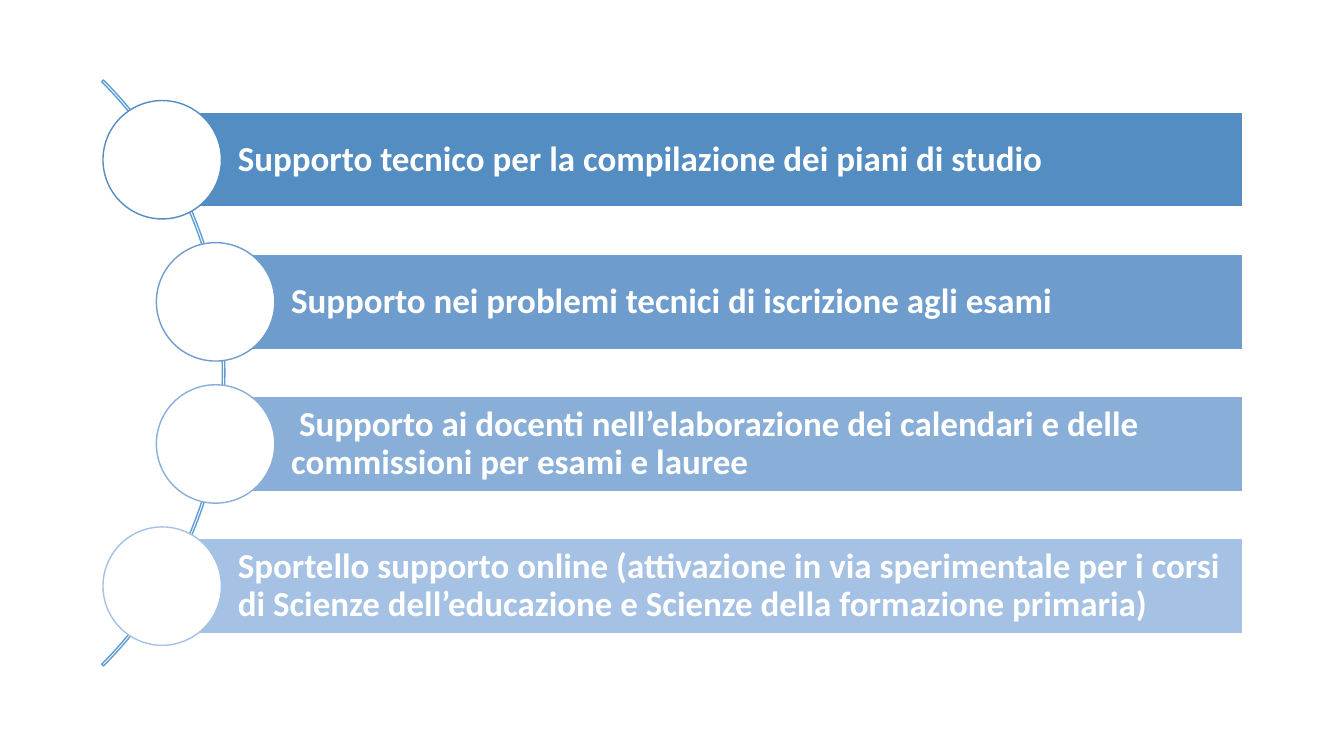
import math

import pptx
import pptx.dml.color
import pptx.enum.shapes
import pptx.enum.text
import pptx.util

SLIDE_WIDTH, SLIDE_HEIGHT = 13.33, 7.5
CENTRE_X, CENTRE_Y = -1.88, 3.7
ARC_RADIUS = 4.11
NODE_RADIUS = 4.08  # circle centres lie just inside the arc
ROW_PITCH = 1.41
BAR_RIGHT, BAR_HEIGHT = 12.33, 0.94
CIRCLE_SIZE = BAR_HEIGHT * 1.25

SERVICES = [
    ("Supporto tecnico per la compilazione dei piani di studio", "538DC1"),
    ("Supporto nei problemi tecnici di iscrizione agli esami", "6E9DCD"),
    (" Supporto ai docenti nell’elaborazione dei calendari e delle "
     "commissioni per esami e lauree", "89AFD8"),
    ("Sportello supporto online (attivazione in via sperimentale per i corsi "
     "di Scienze dell’educazione e Scienze della formazione primaria)", "A5C1E3"),
]


def colour(hex_code):
    return pptx.dml.color.RGBColor.from_string(hex_code)


def add_figure(slide, preset, box, fill, line):
    figure = slide.shapes.add_shape(preset, *map(pptx.util.Inches, box))
    figure.shadow.inherit = False
    if fill:
        figure.fill.solid()
        figure.fill.fore_color.rgb = colour(fill)
    else:
        figure.fill.background()
    figure.line.color.rgb = colour(line)
    figure.line.width = pptx.util.Pt(1)
    return figure


def add_arc(slide):
    """Draw the thin 90-degree arc that the circles sit on."""
    box = (CENTRE_X - ARC_RADIUS, CENTRE_Y - ARC_RADIUS,
           2 * ARC_RADIUS, 2 * ARC_RADIUS)
    arc = add_figure(slide, pptx.enum.shapes.MSO_SHAPE.BLOCK_ARC, box, None, "5F9CD5")
    for index, value in enumerate((189, 27, 0.003)):
        arc.adjustments[index] = value


def add_label(bar, wording):
    frame = bar.text_frame
    frame.word_wrap = True
    frame.vertical_anchor = pptx.enum.text.MSO_ANCHOR.MIDDLE
    frame.margin_left = pptx.util.Inches(0.75)
    frame.margin_top = frame.margin_right = frame.margin_bottom = pptx.util.Inches(0.07)
    paragraph = frame.paragraphs[0]
    paragraph.alignment = pptx.enum.text.PP_ALIGN.LEFT
    paragraph.line_spacing = 0.9
    run = paragraph.add_run()
    run.text = wording
    run.font.name = "Calibri"
    run.font.size = pptx.util.Pt(25)
    run.font.bold = True
    run.font.color.rgb = colour("FFFFFF")


def add_service(slide, row, wording, shade):
    """Draw one bar, starting at the centre of its circle on the arc."""
    offset = (row - (len(SERVICES) - 1) / 2) * ROW_PITCH
    x = CENTRE_X + math.sqrt(NODE_RADIUS ** 2 - offset ** 2)
    y = CENTRE_Y + offset
    bar = add_figure(slide, pptx.enum.shapes.MSO_SHAPE.RECTANGLE,
                     (x, y - BAR_HEIGHT / 2, BAR_RIGHT - x, BAR_HEIGHT),
                     shade, "FFFFFF")
    add_label(bar, wording)
    add_figure(slide, pptx.enum.shapes.MSO_SHAPE.OVAL,
               (x - CIRCLE_SIZE / 2, y - CIRCLE_SIZE / 2, CIRCLE_SIZE, CIRCLE_SIZE),
               "FFFFFF", shade)


def main():
    presentation = pptx.Presentation()
    presentation.slide_width = pptx.util.Inches(SLIDE_WIDTH)
    presentation.slide_height = pptx.util.Inches(SLIDE_HEIGHT)
    slide = presentation.slides.add_slide(presentation.slide_layouts[6])
    add_arc(slide)
    for row, (wording, shade) in enumerate(SERVICES):
        add_service(slide, row, wording, shade)
    presentation.save("out.pptx")


if __name__ == "__main__":
    main()
